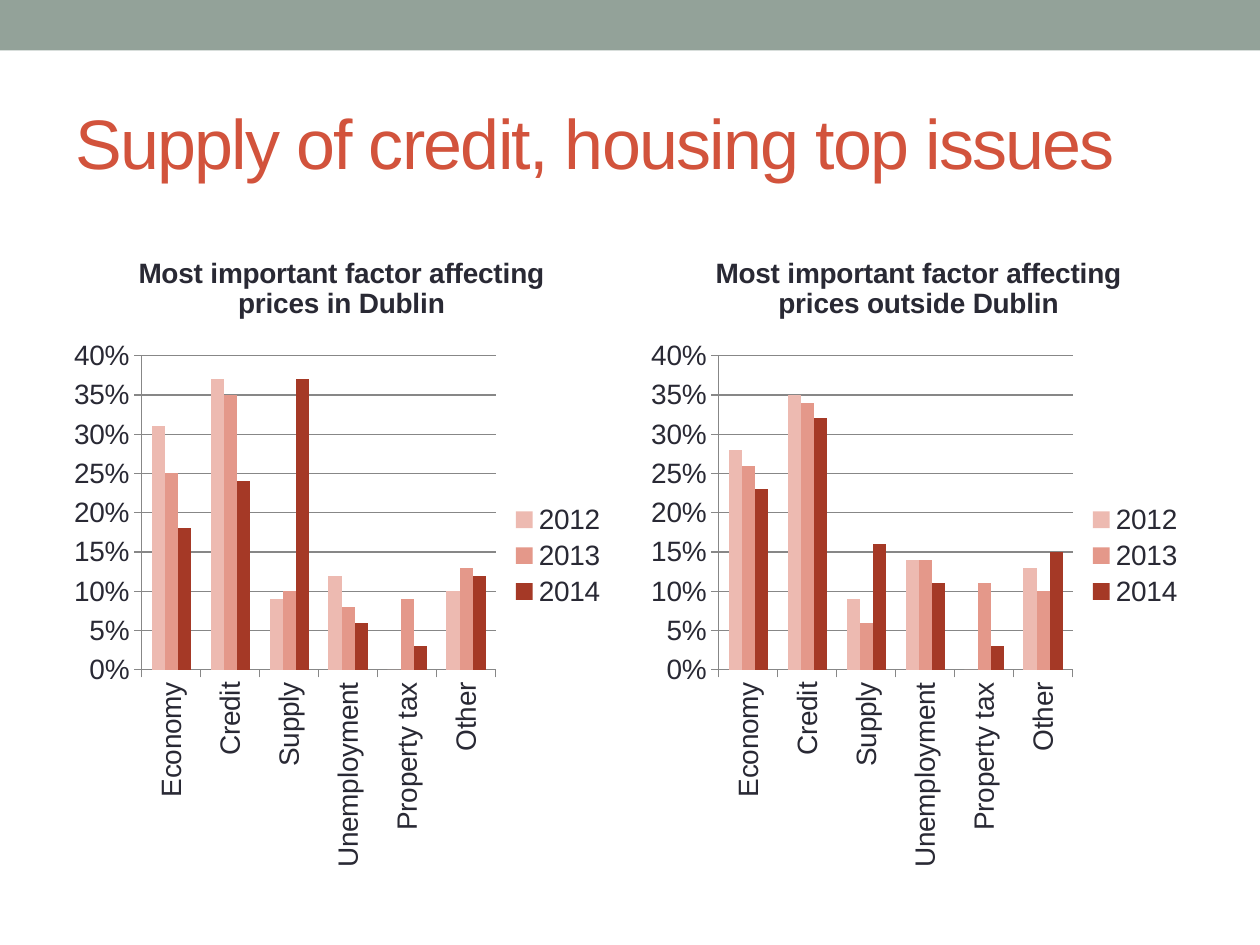
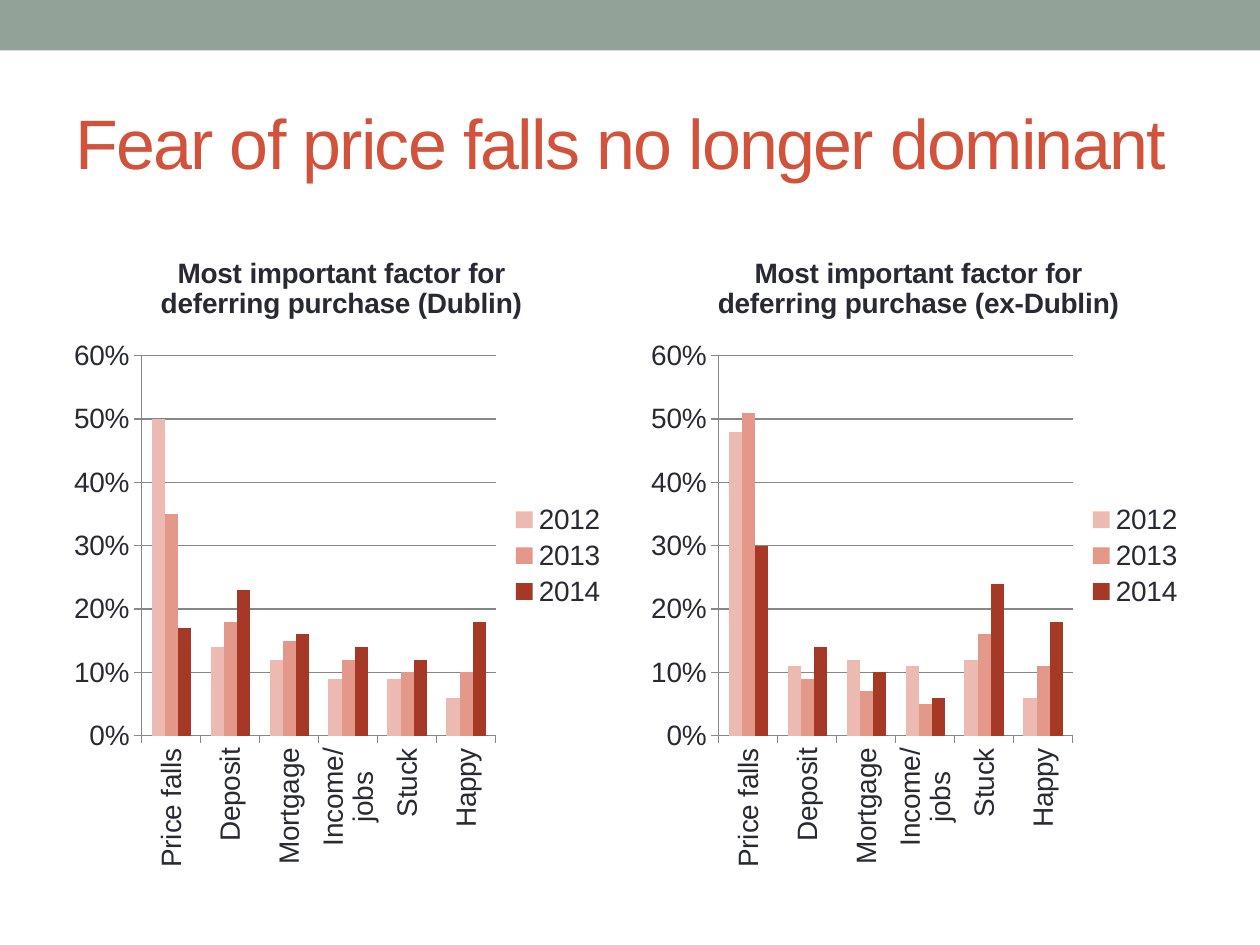
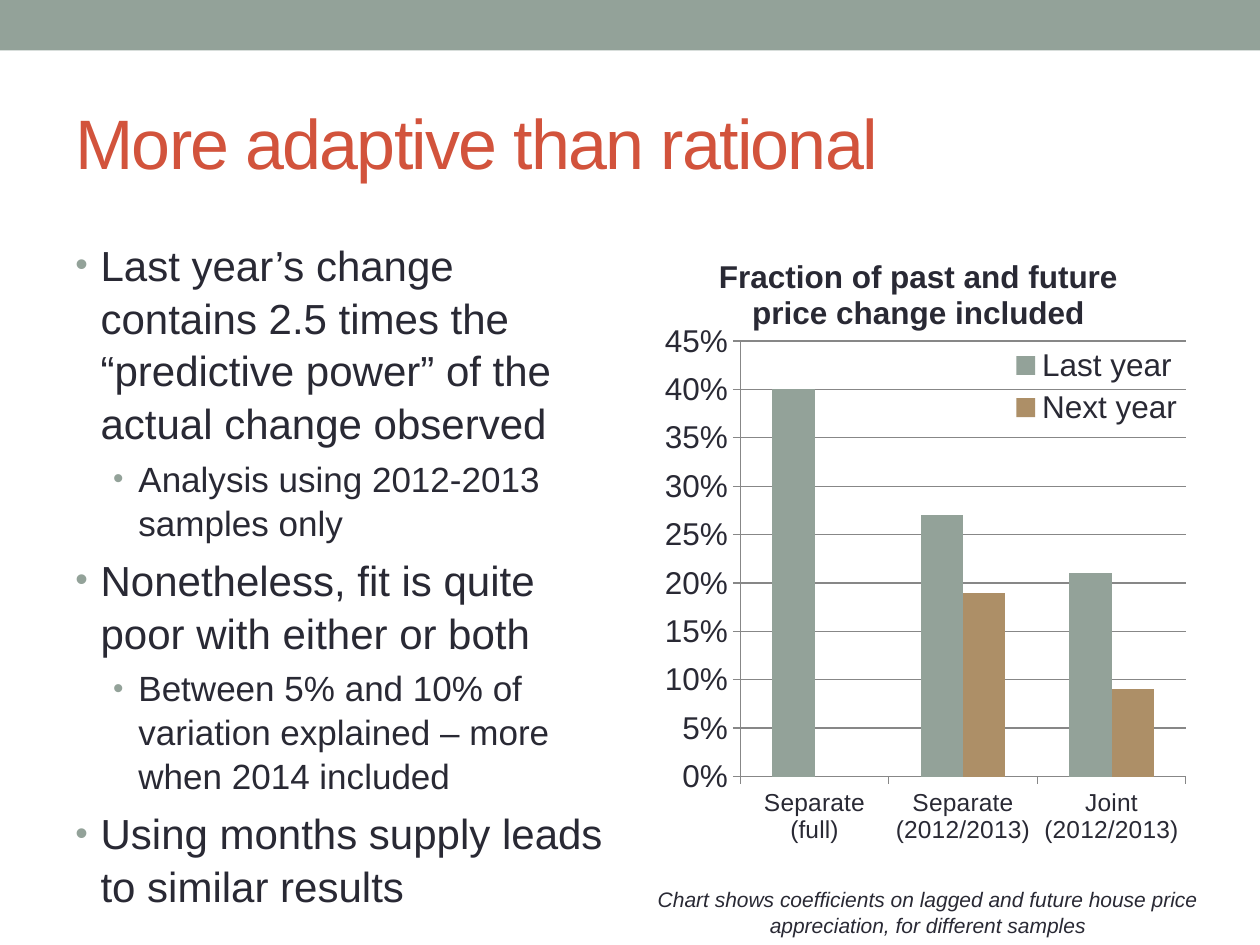
from lxml.etree import SubElement
from pptx import Presentation
from pptx.chart.data import CategoryChartData
from pptx.dml.color import RGBColor
from pptx.enum.chart import XL_CHART_TYPE, XL_LEGEND_POSITION, XL_TICK_MARK
from pptx.enum.shapes import MSO_SHAPE
from pptx.enum.text import MSO_ANCHOR, PP_ALIGN
from pptx.oxml.ns import qn
from pptx.util import Inches, Pt

COLOURS = {
    "sage": "93A299", "brick": "D2533C", "ink": "292934", "axis": "878787",
    "2012": "EDBAB1", "2013": "E4988A", "2014": "A53926",
    "Last year": "93A299", "Next year": "AD8F67",
}
FONT = "Arial"
WIDTH, HEIGHT = Inches(10), Inches(7.5)
MARGIN = Inches(0.5)
COLUMN_WIDTH = Inches(4.42)
COLUMNS = [MARGIN, WIDTH - MARGIN - COLUMN_WIDTH]
BAND_HEIGHT = Inches(0.4)
TITLE_TOP, TITLE_HEIGHT = Inches(0.58), Inches(1.08)
BODY_TOP, BODY_HEIGHT = Inches(1.83), Inches(5.16)

ISSUES = ["Economy", "Credit", "Supply", "Unemployment", "Property tax", "Other"]
REASONS = ["Price falls", "Deposit", "Mortgage", "Income/jobs", "Stuck", "Happy"]
SAMPLES = ["Separate\n(full)", "Separate\n(2012/2013)", "Joint\n(2012/2013)"]

YEARLY = {"size": 16, "label_size": 16, "rotation": "-5400000"}
SLIDES = [
    {"title": "Supply of credit, housing top issues", "charts": [
        {**YEARLY, "column": 0, "top_value": 0.4, "step": 0.05, "categories": ISSUES,
         "title": "Most important factor affecting prices in Dublin",
         "series": {"2012": [0.31, 0.37, 0.09, 0.12, 0, 0.1],
                    "2013": [0.25, 0.35, 0.1, 0.08, 0.09, 0.13],
                    "2014": [0.18, 0.24, 0.37, 0.06, 0.03, 0.12]}},
        {**YEARLY, "column": 1, "top_value": 0.4, "step": 0.05, "categories": ISSUES,
         "title": "Most important factor affecting prices outside Dublin",
         "series": {"2012": [0.28, 0.35, 0.09, 0.14, 0, 0.13],
                    "2013": [0.26, 0.34, 0.06, 0.14, 0.11, 0.1],
                    "2014": [0.23, 0.32, 0.16, 0.11, 0.03, 0.15]}},
    ]},
    {"title": "Fear of price falls no longer dominant", "charts": [
        {**YEARLY, "column": 0, "top_value": 0.6, "step": 0.1, "categories": REASONS,
         "title": "Most important factor for deferring purchase (Dublin)",
         "series": {"2012": [0.5, 0.14, 0.12, 0.09, 0.09, 0.06],
                    "2013": [0.35, 0.18, 0.15, 0.12, 0.1, 0.1],
                    "2014": [0.17, 0.23, 0.16, 0.14, 0.12, 0.18]}},
        {**YEARLY, "column": 1, "top_value": 0.6, "step": 0.1, "categories": REASONS,
         "title": "Most important factor for deferring purchase (ex-Dublin)",
         "series": {"2012": [0.48, 0.11, 0.12, 0.11, 0.12, 0.06],
                    "2013": [0.51, 0.09, 0.07, 0.05, 0.16, 0.11],
                    "2014": [0.3, 0.14, 0.1, 0.06, 0.24, 0.18]}},
    ]},
    {"title": "More adaptive than rational", "charts": [
        {"size": 18, "label_size": 14, "rotation": "0",
         "column": 1, "top_value": 0.45, "step": 0.05, "categories": SAMPLES,
         "title": "Fraction of past and future price change included",
         "series": {"Last year": [0.4, 0.27, 0.21], "Next year": [None, 0.19, 0.09]},
         "plot_box": (0.18, 0.17, 0.8, 0.67), "legend_box": (0.66, 0.17, 0.32, 0.14)},
    ]},
]
# Each point is its level and its wording.
POINTS = [
    (0, "Last year’s change contains 2.5 times the “predictive power” of the actual change observed"),
    (1, "Analysis using 2012-2013 samples only"),
    (0, "Nonetheless, fit is quite poor with either or both"),
    (1, "Between 5% and 10% of variation explained – more when 2014 included"),
    (0, "Using months supply leads to similar results"),
]
POINT_SIZES = [24, 20]
POINT_INDENTS = [0.2, 0.5]
NOTE = "Chart shows coefficients on lagged and future house price appreciation, for different samples"


def format_font(font, colour, size, **extras):
    font.color.rgb = RGBColor.from_string(COLOURS[colour])
    for name, value in {"name": FONT, "size": Pt(size), **extras}.items():
        setattr(font, name, value)


def set_layout(part, position, box, target=None):
    """Fix a chart part to a box given as shares of the chart's size."""
    for automatic in part.findall(qn("c:layout")):
        part.remove(automatic)
    layout = part.makeelement(qn("c:layout"))
    part.insert(position, layout)
    manual = SubElement(layout, qn("c:manualLayout"))
    settings = {"layoutTarget": target} if target else {}
    settings.update(xMode="edge", yMode="edge", **dict(zip("xywh", box)))
    for name, value in settings.items():
        SubElement(manual, qn(f"c:{name}")).set("val", str(value))


deck = Presentation()
deck.slide_width, deck.slide_height = WIDTH, HEIGHT

for content in SLIDES:
    slide = deck.slides.add_slide(deck.slide_layouts[6])

    band = slide.shapes.add_shape(MSO_SHAPE.RECTANGLE, 0, 0, WIDTH, BAND_HEIGHT)
    band.shadow.inherit = False
    band.fill.solid()
    band.fill.fore_color.rgb = RGBColor.from_string(COLOURS["sage"])
    band.line.fill.background()

    heading = slide.shapes.add_textbox(
        MARGIN, TITLE_TOP, WIDTH - 2 * MARGIN, TITLE_HEIGHT).text_frame
    heading.word_wrap = True
    heading.vertical_anchor = MSO_ANCHOR.MIDDLE
    wording = heading.paragraphs[0].add_run()
    wording.text = content["title"]
    format_font(wording.font, "brick", 40)
    wording.font._element.set("spc", "-100")

    for figures in content["charts"]:
        data = CategoryChartData(number_format="0%")
        data.categories = figures["categories"]
        for name, values in figures["series"].items():
            data.add_series(name, values)
        chart = slide.shapes.add_chart(
            XL_CHART_TYPE.COLUMN_CLUSTERED, COLUMNS[figures["column"]], BODY_TOP,
            COLUMN_WIDTH, BODY_HEIGHT, data).chart
        format_font(chart.font, "ink", figures["size"])

        caption = chart.chart_title.text_frame
        caption.text = figures["title"]
        format_font(caption.paragraphs[0].runs[0].font, "ink", figures["size"], bold=True)

        plot = chart.plots[0]
        plot.gap_width = 150
        plot.vary_by_categories = False
        for series in plot.series:
            series.format.fill.solid()
            series.format.fill.fore_color.rgb = RGBColor.from_string(COLOURS[series.name])

        chart.has_legend = True
        chart.legend.position = XL_LEGEND_POSITION.RIGHT
        chart.legend.include_in_layout = False

        value_axis, category_axis = chart.value_axis, chart.category_axis
        scale = {"minimum_scale": 0, "maximum_scale": figures["top_value"],
                 "major_unit": figures["step"], "has_major_gridlines": True}
        for name, value in scale.items():
            setattr(value_axis, name, value)
        value_axis.tick_labels.number_format = "0%"
        value_axis.tick_labels.number_format_is_linked = False
        for axis in (value_axis, category_axis):
            axis.major_tick_mark = XL_TICK_MARK.OUTSIDE
        for ruled in (value_axis, category_axis, value_axis.major_gridlines):
            ruled.format.line.color.rgb = RGBColor.from_string(COLOURS["axis"])
            ruled.format.line.width = Pt(0.75)
        format_font(category_axis.tick_labels.font, "ink", figures["label_size"])
        label_body = category_axis._element.find(qn("c:txPr")).find(qn("a:bodyPr"))
        label_body.set("rot", figures["rotation"])
        label_body.set("vert", "horz")

        if "plot_box" in figures:
            set_layout(plot._element.getparent(), 0, figures["plot_box"], "inner")
            set_layout(chart.legend._element, 1, figures["legend_box"])

# The last slide also carries the findings and a note under its chart.
findings = slide.shapes.add_textbox(
    COLUMNS[0], BODY_TOP, COLUMN_WIDTH, BODY_HEIGHT).text_frame
findings.word_wrap = True
for number, (level, text) in enumerate(POINTS):
    point = findings.add_paragraph() if number else findings.paragraphs[0]
    wording = point.add_run()
    wording.text = text
    format_font(wording.font, "ink", POINT_SIZES[level])
    spacing = {"level": level, "line_spacing": 1.05,
               "space_before": Pt(0.2 * POINT_SIZES[level])}
    for name, value in spacing.items():
        setattr(point, name, value)
    properties = point._p.get_or_add_pPr()
    properties.set("marL", str(Inches(POINT_INDENTS[level])))
    properties.set("indent", str(Inches(-0.2)))
    bullet_colour = SubElement(properties, qn("a:buClr"))
    SubElement(bullet_colour, qn("a:srgbClr")).set("val", COLOURS["sage"])
    SubElement(properties, qn("a:buSzPct")).set("val", "85000")
    SubElement(properties, qn("a:buFont")).set("typeface", FONT)
    SubElement(properties, qn("a:buChar")).set("char", "•")

note = slide.shapes.add_textbox(
    COLUMNS[1], BODY_TOP + BODY_HEIGHT, Inches(4.57), Inches(0.5)).text_frame
note.word_wrap = True
note.paragraphs[0].alignment = PP_ALIGN.CENTER
wording = note.paragraphs[0].add_run()
wording.text = NOTE
format_font(wording.font, "ink", 12, italic=True)

deck.save("out.pptx")
